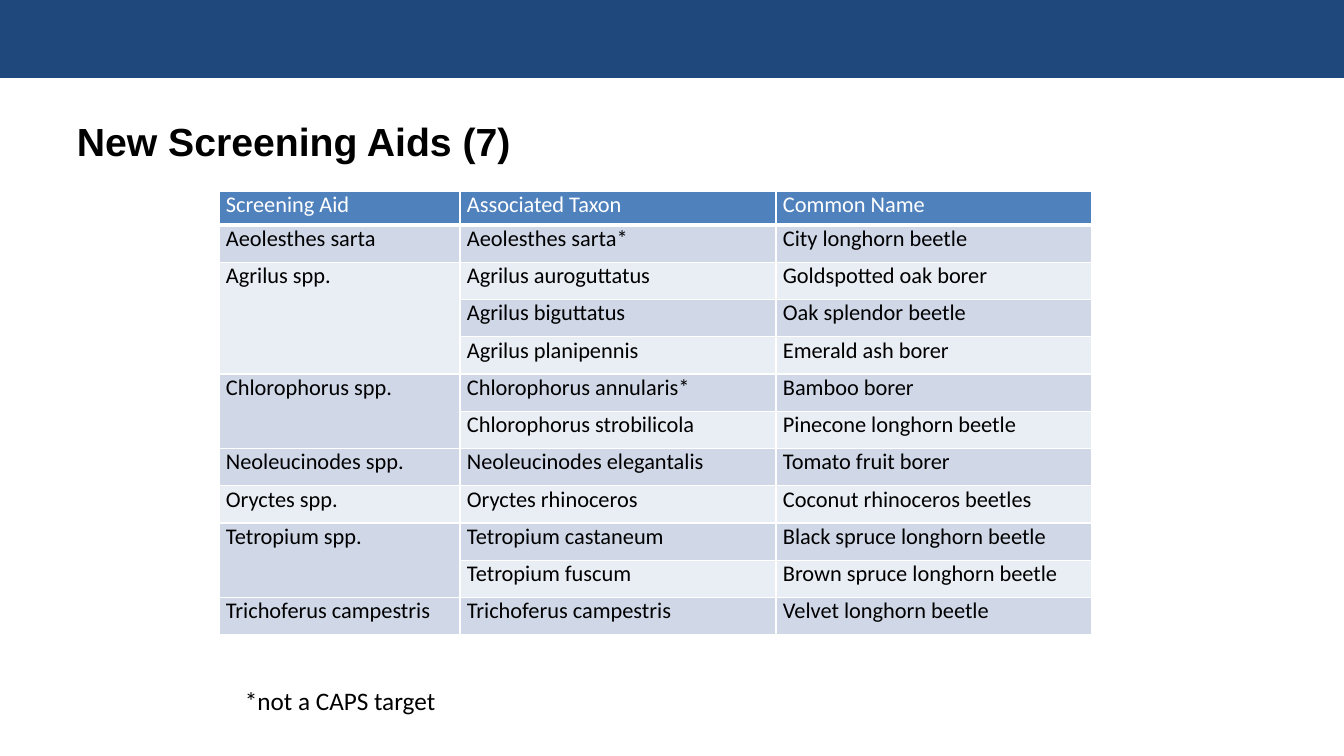
from lxml import etree
from pptx import Presentation, util as u
from pptx.dml.color import RGBColor
from pptx.enum import shapes, text
from pptx.oxml import ns

COLORS = {"banner": "1F497D", "header": "4F81BD", "dark_band": "D0D8E8",
          "light_band": "E9EDF4", "white": "FFFFFF", "black": "000000"}
HEADERS = ["Screening Aid", "Associated Taxon", "Common Name"]
AIDS = [
    ("Aeolesthes sarta", [("Aeolesthes sarta*", "City longhorn beetle")]),
    ("Agrilus spp.", [("Agrilus auroguttatus", "Goldspotted oak borer"),
                      ("Agrilus biguttatus", "Oak splendor beetle"),
                      ("Agrilus planipennis", "Emerald ash borer")]),
    ("Chlorophorus spp.", [("Chlorophorus annularis*", "Bamboo borer"),
                           ("Chlorophorus strobilicola", "Pinecone longhorn beetle")]),
    ("Neoleucinodes spp.", [("Neoleucinodes elegantalis", "Tomato fruit borer")]),
    ("Oryctes spp.", [("Oryctes rhinoceros", "Coconut rhinoceros beetles")]),
    ("Tetropium spp.", [("Tetropium castaneum", "Black spruce longhorn beetle"),
                        ("Tetropium fuscum", "Brown spruce longhorn beetle")]),
    ("Trichoferus campestris", [("Trichoferus campestris", "Velvet longhorn beetle")]),
]


def px(n):
    return u.Emu(round(n * 914400 / 100.8))


def rgb(name):
    return RGBColor.from_string(COLORS[name])


def style(p, size, color, font="Calibri", bold=False):
    p.font.name, p.font.size, p.font.bold = font, u.Pt(size), bold
    p.font.color.rgb = rgb(color)


def add_banner(slide, x, y, w, h):
    sp = slide.shapes.add_shape(shapes.MSO_SHAPE.RECTANGLE, px(x), px(y), px(w), px(h))
    sp.shadow.inherit = False
    sp.fill.solid()
    sp.fill.fore_color.rgb = rgb("banner")
    sp.line.fill.background()


def add_label(slide, x, y, w, h, words, size, anchor, **font):
    tf = slide.shapes.add_textbox(px(x), px(y), px(w), px(h)).text_frame
    tf.word_wrap = True
    tf.vertical_anchor = anchor
    p = tf.paragraphs[0]
    p.text = words
    style(p, size, "black", **font)


def add_borders(cell, bottom):
    """Draw white cell borders; bottom is the lower one's width in points."""
    tcPr = cell._tc.get_or_add_tcPr()
    for side, width in (("L", 1), ("R", 1), ("T", 1), ("B", bottom)):
        ln = etree.SubElement(tcPr, ns.qn(f"a:ln{side}"), w=str(u.Pt(width)))
        fill = etree.SubElement(ln, ns.qn("a:solidFill"))
        etree.SubElement(fill, ns.qn("a:srgbClr"), val=COLORS["white"])


def style_cell(cell, row):
    header = row == 0
    add_borders(cell, 3 if header else 1)
    cell.fill.solid()
    band = "header" if header else "dark_band" if row % 2 else "light_band"
    cell.fill.fore_color.rgb = rgb(band)
    cell.margin_left = cell.margin_right = px(7)
    cell.margin_top = cell.margin_bottom = 0
    style(cell.text_frame.paragraphs[0], 16, "white" if header else "black")


def add_aids_table(slide, x, y, w, h):
    count = sum(len(taxa) for _, taxa in AIDS)
    table = slide.shapes.add_table(count + 1, 3, px(x), px(y), px(w), px(h)).table
    first_col, header_h = 241, 34
    for i, col in enumerate(table.columns):
        col.width = px((w - first_col) / 2 if i else first_col)
    for i, row in enumerate(table.rows):
        row.height = px((h - header_h) / count if i else header_h)

    for i, words in enumerate(HEADERS):
        table.cell(0, i).text = words
    row = 1
    for aid, taxa in AIDS:
        table.cell(row, 0).text = aid
        if len(taxa) > 1:
            table.cell(row, 0).merge(table.cell(row + len(taxa) - 1, 0))
        for taxon, common in taxa:
            table.cell(row, 1).text = taxon
            table.cell(row, 2).text = common
            row += 1
    for r in range(count + 1):
        for c in range(3):
            style_cell(table.cell(r, c), r)


def main():
    prs = Presentation()
    prs.slide_width, prs.slide_height = px(1344), px(756)
    slide = prs.slides.add_slide(prs.slide_layouts[6])
    add_banner(slide, 0, 0, 1344, 78)
    add_label(slide, 67, 101, 1210, 79, "New Screening Aids (7)", 28,
              text.MSO_ANCHOR.MIDDLE, font="Arial", bold=True)
    add_aids_table(slide, 219, 191, 873, 444)
    add_label(slide, 235, 680, 420, 41, "*not a CAPS target", 18, text.MSO_ANCHOR.TOP)
    prs.save("out.pptx")


if __name__ == "__main__":
    main()
